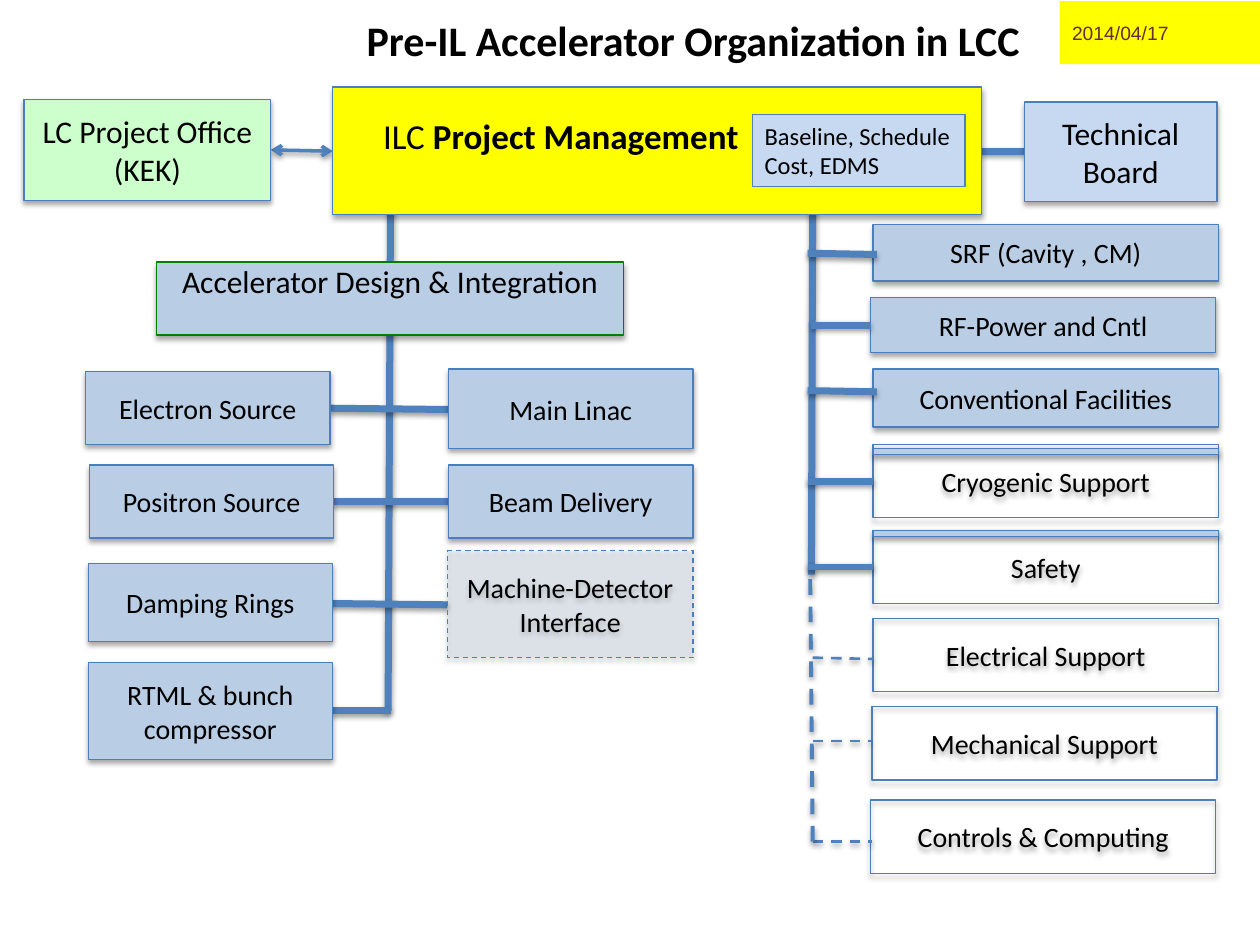
"""Build the Pre-IL accelerator organization chart slide."""
from dataclasses import dataclass

import pptx
import pptx.dml.color
import pptx.enum.dml
import pptx.enum.shapes
import pptx.enum.text
import pptx.oxml
import pptx.oxml.ns
import pptx.util
from pptx.util import Inches

SHAPE = pptx.enum.shapes.MSO_SHAPE
ALIGN = pptx.enum.text.PP_ALIGN
ANCHOR = pptx.enum.text.MSO_ANCHOR
DASH = pptx.enum.dml.MSO_LINE.DASH


@dataclass(frozen=True)
class Theme:
    """Colours, fonts and sizes of the slide."""
    black: str = "000000"
    date_ink: str = "692A36"
    yellow: str = "FFFF00"
    green: str = "CCFFCC"
    blue: str = "B9CDE5"
    pale: str = "C6D9F1"
    border: str = "4B7EBC"
    design_border: str = "008000"
    link: str = "4F81BD"
    font: str = "Calibri"
    date_font: str = "Arial"
    title: int = 24
    management: int = 20
    office: int = 18
    unit: int = 16
    note: int = 14
    date: int = 11
    border_width: float = 0.75
    trunk_width: float = 4
    arrow_width: float = 2
    planned_trunk_width: float = 2.25
    planned_width: float = 1.5


THEME = Theme()


def rgb(value):
    """Return a colour from its hex value."""
    return pptx.dml.color.RGBColor.from_string(value)


def add_xml(parent, tag, children="", **attributes):
    """Append a DrawingML element to a parent."""
    pairs = "".join(f' {name}="{value}"' for name, value in attributes.items())
    space = pptx.oxml.ns.nsdecls("a")
    parent.append(pptx.oxml.parse_xml(f"<a:{tag} {space}{pairs}>{children}</a:{tag}>"))
    return parent[-1]


def cast_shadow(effects, opacity, distance):
    """Put a soft downward shadow in an effect list."""
    colour = f'<a:srgbClr val="{THEME.black}"><a:alpha val="{opacity * 1000}"/></a:srgbClr>'
    add_xml(effects, "outerShdw", colour, blurRad=pptx.util.Pt(3.1),
            dist=pptx.util.Pt(distance), dir=90 * 60000, rotWithShape=0)


def write_text(holder, text, size=THEME.unit, font=THEME.font, colour=THEME.black, bold=False,
               lead="", align=ALIGN.CENTER, anchor=ANCHOR.MIDDLE, wrap=True, left=0.1, top=0.05):
    """Write lines of text, the first with an optional plain lead."""
    frame = holder.text_frame
    frame.word_wrap = wrap
    frame.vertical_anchor = anchor
    frame.margin_left, frame.margin_top = Inches(left), Inches(top)
    for index, line in enumerate(text.split("\n")):
        paragraph = frame.add_paragraph() if index else frame.paragraphs[0]
        paragraph.alignment = align
        pieces = [(line, bold)]
        if lead and not index:
            pieces.insert(0, (lead, False))
        for piece, weight in pieces:
            run = paragraph.add_run()
            run.text = piece
            run.font.name, run.font.size = font, pptx.util.Pt(size)
            run.font.bold = weight
            run.font.color.rgb = rgb(colour)


def add_box(slide, place, text="", fill=THEME.blue, border=THEME.border, opacity=100,
            dash=None, shadow=True, kind=SHAPE.FLOWCHART_PROCESS, **text_format):
    """Add a chart box with its text."""
    box = slide.shapes.add_shape(kind, *map(Inches, place))
    box.shadow.inherit = False
    if shadow:
        cast_shadow(box.element.spPr.find(pptx.oxml.ns.qn("a:effectLst")), 35, 1.8)
    if fill:
        box.fill.solid()
        box.fill.fore_color.rgb = rgb(fill)
        if opacity < 100:
            colour = box.element.spPr.find(".//" + pptx.oxml.ns.qn("a:srgbClr"))
            add_xml(colour, "alpha", val=opacity * 1000)
    else:
        box.fill.background()
    if border:
        box.line.color.rgb = rgb(border)
        box.line.width = pptx.util.Pt(THEME.border_width)
        if dash:
            box.line.dash_style = dash
    else:
        box.line.fill.background()
    if text:
        write_text(box, text, **text_format)


def add_link(slide, ends, width=THEME.trunk_width, dash=None, arrows=False):
    """Add a straight link between two points."""
    link = slide.shapes.add_connector(pptx.enum.shapes.MSO_CONNECTOR.STRAIGHT, *map(Inches, ends))
    link.line.color.rgb = rgb(THEME.link)
    link.line.width = pptx.util.Pt(width)
    if dash:
        link.line.dash_style = dash
    if arrows:
        for end in ("headEnd", "tailEnd"):
            add_xml(link.get_or_add_ln(), end, type="arrow")
    cast_shadow(add_xml(link.element.spPr, "effectLst"), 38, 1.6)


def add_heading(slide):
    """Add the date and the title."""
    add_box(slide, (8.41, 0.01, 1.59, 0.5), "2014/04/17", fill=THEME.yellow, border=None,
            shadow=False, kind=SHAPE.RECTANGLE, size=THEME.date, font=THEME.date_font,
            colour=THEME.date_ink, align=ALIGN.LEFT)
    title = slide.shapes.add_textbox(*map(Inches, (2.66, 0.07, 5.63, 0.5)))
    write_text(title, "Pre-IL Accelerator Organization in LCC", size=THEME.title, bold=True,
               align=ALIGN.LEFT, anchor=ANCHOR.TOP, left=0.25)


def add_technical_column(slide):
    """Add the technical groups with their trunk and branches."""
    groups = [
        ("SRF (Cavity , CM)", 6.93, 1.78, 0.45, THEME.blue),
        ("RF-Power and Cntl", 6.91, 2.36, 0.44, THEME.blue),
        ("Conventional Facilities", 6.93, 2.93, 0.46, THEME.blue),
        ("Cryogenic Support", 6.93, 3.53, 0.58, None),
        ("Safety", 6.93, 4.21, 0.58, None),
        ("Electrical Support", 6.93, 4.91, 0.58, None),
        ("Mechanical Support", 6.92, 5.61, 0.58, None),
        ("Controls & Computing", 6.91, 6.35, 0.58, None),
    ]
    for name, left, top, height, fill in groups:
        add_box(slide, (left, top, 2.74, height), name, fill=fill)
    for strip_top in (3.56, 4.21):
        add_box(slide, (6.93, strip_top, 2.74, 0.05))
    add_link(slide, (6.44, 4.56, 6.45, 1.47))
    for start, y, end, end_y in ((6.41, 2.01, 6.96, 2.02), (6.44, 2.58, 6.91, 2.58),
                                 (6.41, 3.1, 6.96, 3.11), (6.41, 3.82, 6.93, 3.82),
                                 (6.41, 4.5, 6.93, 4.5)):
        add_link(slide, (start, y, end, end_y))
    for y, end, end_y in ((5.22, 6.93, 5.23), (5.88, 6.91, 5.88), (6.68, 6.92, 6.68)):
        add_link(slide, (6.45, y, end, end_y), THEME.planned_width, DASH.DASH)
    add_link(slide, (6.45, 6.68, 6.43, 4.57), THEME.planned_trunk_width, DASH.DASH)


def add_design_branch(slide):
    """Add accelerator design and the systems under it."""
    for ends in ((3.08, 5.64, 3.1, 1.47), (2.62, 3.24, 3.56, 3.25), (2.64, 3.98, 3.56, 3.98),
                 (2.63, 4.79, 3.55, 4.8), (2.63, 5.64, 3.1, 5.64)):
        add_link(slide, ends)
    add_box(slide, (1.24, 2.08, 3.71, 0.58), "Accelerator Design & Integration",
            border=THEME.design_border, size=THEME.office, anchor=ANCHOR.TOP, top=0)
    systems = [
        ("Electron Source", 0.68, 2.95, 0.58),
        ("Positron Source", 0.71, 3.69, 0.58),
        ("Damping Rings", 0.7, 4.47, 0.62),
        ("RTML & bunch compressor", 0.7, 5.26, 0.77),
        ("Main Linac", 3.56, 2.93, 0.63),
        ("Beam Delivery", 3.56, 3.69, 0.58),
    ]
    for name, left, top, height in systems:
        add_box(slide, (left, top, 1.94, height), name)
    add_box(slide, (3.55, 4.37, 1.95, 0.85), "Machine-Detector Interface", opacity=25,
            dash=DASH.DASH)


def add_management_row(slide):
    """Add project management with its office and board."""
    add_link(slide, (8.13, 1.2, 7.79, 1.2))
    add_link(slide, (2.64, 1.2, 2.15, 1.19), THEME.arrow_width, arrows=True)
    add_box(slide, (0.19, 0.79, 1.96, 0.8), "LC Project Office (KEK)", fill=THEME.green,
            size=THEME.office)
    add_box(slide, (2.64, 0.69, 5.15, 1.01), "Project Management", fill=THEME.yellow,
            size=THEME.management, bold=True, lead="ILC ", align=ALIGN.LEFT,
            anchor=ANCHOR.TOP, left=0.4, top=0.22)
    add_box(slide, (5.97, 0.91, 1.69, 0.57), "Baseline, Schedule\nCost, EDMS", fill=THEME.pale,
            border=THEME.link, shadow=False, kind=SHAPE.RECTANGLE, size=THEME.note,
            align=ALIGN.LEFT, anchor=ANCHOR.TOP, wrap=False)
    add_box(slide, (8.13, 0.81, 1.53, 0.79), "Technical\nBoard", fill=THEME.pale,
            size=THEME.office)


def main():
    """Build and save the slide."""
    deck = pptx.Presentation()
    deck.slide_width, deck.slide_height = Inches(10), Inches(7.5)
    slide = deck.slides.add_slide(deck.slide_layouts[6])
    add_heading(slide)
    add_technical_column(slide)
    add_design_branch(slide)
    add_management_row(slide)
    deck.save("out.pptx")


if __name__ == "__main__":
    main()
